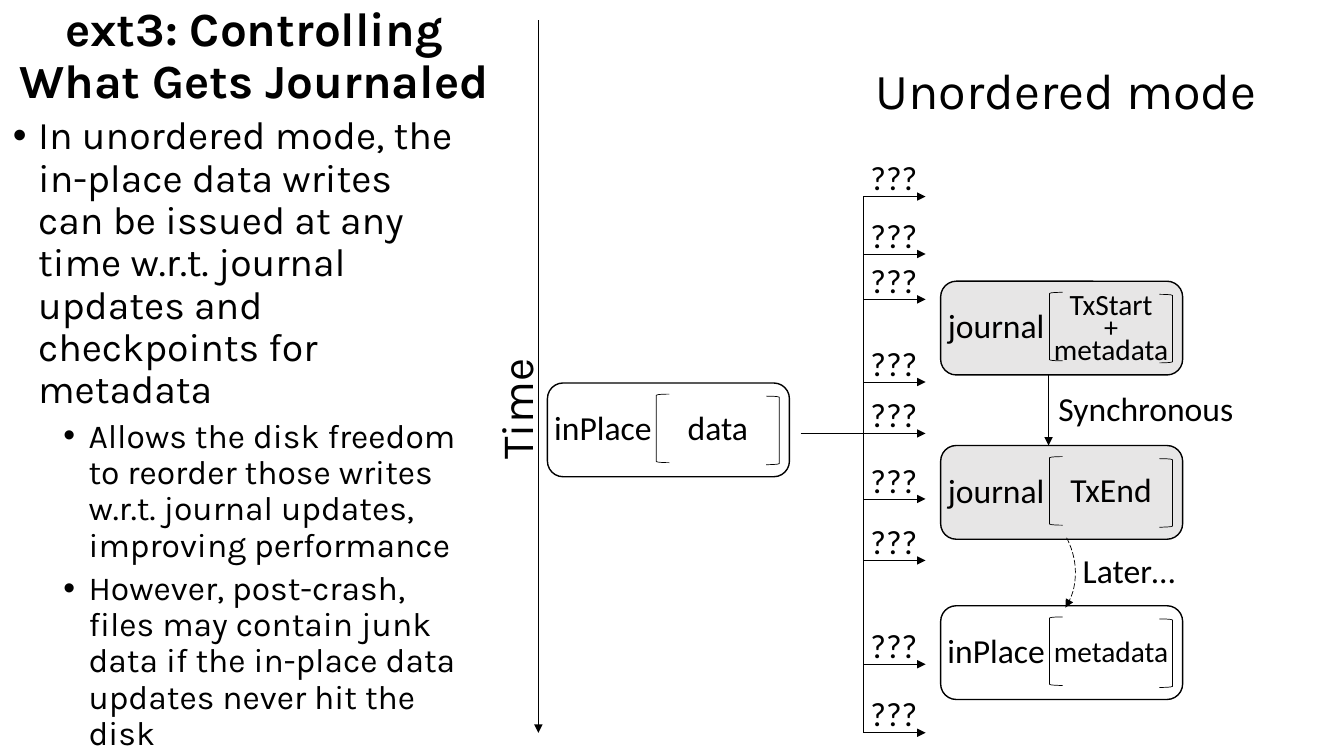
from lxml import etree
from pptx import Presentation
from pptx.dml.color import RGBColor
from pptx.enum.dml import MSO_LINE
from pptx.enum.shapes import MSO_CONNECTOR, MSO_SHAPE
from pptx.enum.text import MSO_ANCHOR, PP_ALIGN
from pptx.oxml.ns import qn
from pptx.util import Inches, Pt

LEFT, CENTER = PP_ALIGN.LEFT, PP_ALIGN.CENTER
TOP, MIDDLE = MSO_ANCHOR.TOP, MSO_ANCHOR.MIDDLE
STRAIGHT = MSO_CONNECTOR.STRAIGHT
ROUND_RECT, BRACKET, ARC = MSO_SHAPE.ROUNDED_RECTANGLE, MSO_SHAPE.LEFT_BRACKET, MSO_SHAPE.ARC
LONG_DASH = MSO_LINE.LONG_DASH
BLACK, WHITE, GRAY = "000000", "FFFFFF", "E7E6E6"

# Content
TITLE = "ext3: Controlling What Gets Journaled"
MODE = "Unordered mode"
BULLETS = [  # text, level, size, space before
    ("In unordered mode, the in-place data writes can be issued at any time "
     "w.r.t. journal updates and checkpoints for metadata", 0, 28, 10),
    ("Allows the disk freedom to reorder those writes w.r.t. journal updates, "
     "improving performance", 1, 24, 5),
    ("However, post-crash, files may contain junk data if the in-place data "
     "updates never hit the disk", 1, 24, 5),
]
WRITES = [  # left, top, fill, target, contents, size, contents offset
    (5.43, 3.8, WHITE, "inPlace", ["data"], 24, 0.19),
    (9.33, 2.79, GRAY, "journal", ["TxStart", "metadata"], 21, 0),
    (9.33, 4.42, GRAY, "journal", ["TxEnd"], 24, 0.18),
    (9.33, 6.01, WHITE, "inPlace", ["metadata"], 21, 0.22),
]
NOTES = [("Synchronous", 10.4, 3.8, 1.97), ("Later…", 10.64, 5.41, 1.19)]
GUESS = "???"
GUESS_YS = [1.95, 2.52, 2.97, 3.79, 4.3, 4.95, 5.56, 6.59, 7.27]
SPINE_X = 8.56
BOX_W, BOX_H = 2.4, 0.93

prs = Presentation()
prs.slide_width, prs.slide_height = Inches(13.33), Inches(7.5)
s = prs.slides.add_slide(prs.slide_layouts[6])


def rgb(color):
    return RGBColor.from_string(color)


def inches(*values):
    return [Inches(v) for v in values]


def add_text(text, x, y, w, h, size=24, font="Calibri", bold=False, align=CENTER,
             anchor=TOP, spacing=None, gap=0, rotation=0):
    sp = s.shapes.add_textbox(*inches(x, y, w, h))
    sp.rotation = rotation
    tf = sp.text_frame
    tf.word_wrap = True
    tf.vertical_anchor = anchor
    for i, line in enumerate([text] if isinstance(text, str) else text):
        p = tf.paragraphs[0] if i == 0 else tf.add_paragraph()
        p.alignment = align
        p.line_spacing = spacing
        if i:
            p.space_before = Pt(gap)
        r = p.add_run()
        r.text = line
        r.font.size, r.font.name, r.font.bold = Pt(size), font, bold
        r.font.color.rgb = rgb(BLACK)
    return sp


def add_head(sp):
    etree.SubElement(sp.line._get_or_add_ln(), qn("a:tailEnd"), type="triangle")


def add_line(x1, y1, x2, y2, arrow=True):
    c = s.shapes.add_connector(STRAIGHT, *inches(x1, y1, x2, y2))
    c.line.color.rgb = rgb(BLACK)
    c.line.width = Pt(0.5)
    if arrow:
        add_head(c)
    etree.SubElement(c._element.spPr, qn("a:effectLst"))


def add_outline(kind, x, y, w, h, fill=None, width=0.5):
    sp = s.shapes.add_shape(kind, *inches(x, y, w, h))
    sp.shadow.inherit = False
    if fill:
        sp.fill.solid()
        sp.fill.fore_color.rgb = rgb(fill)
    else:
        sp.fill.background()
    sp.line.color.rgb = rgb(BLACK)
    sp.line.width = Pt(width)
    return sp


# Title and time axis
add_text(TITLE, 0.01, 0.01, 5.02, 1.11, size=34, font="Karla", bold=True,
         anchor=MIDDLE, spacing=0.9)
add_line(5.34, 0.2, 5.34, 7.27)
add_text("Time", 4.44, 3.74, 1.35, 0.64, size=32, font="Karla", rotation=270)

# Bullets
body = add_text([b[0] for b in BULLETS], 0.03, 1.1, 4.63, 6.41, font="Karla",
                align=LEFT, spacing=0.9)
for p, (_, level, size, before) in zip(body.text_frame.paragraphs, BULLETS):
    p.level = level
    p.space_before = Pt(before)
    p.runs[0].font.size = Pt(size)
    pPr = p._p.get_or_add_pPr()
    pPr.set("marL", str(Inches(0.25 + 0.5 * level)))
    pPr.set("indent", str(Inches(-0.25)))
    etree.SubElement(pPr, qn("a:buFont"), typeface="Arial")
    etree.SubElement(pPr, qn("a:buChar"), char="•")

# Disk writes
add_text(MODE, 8.48, 0.54, 4.19, 0.71, size=36, font="Karla")
for x, y, fill, target, contents, size, dy in WRITES:
    add_outline(ROUND_RECT, x, y, BOX_W, BOX_H, fill, 1)
    add_text(contents, x + 0.99, y + dy, 1.4, 0.5, size=size, gap=7)
    add_outline(BRACKET, x + 1.08, y + 0.11, 0.13, 0.68)
    closing = add_outline(BRACKET, x + 2.17, y + 0.13, 0.13, 0.68)
    closing._element.spPr.xfrm.set("flipH", "1")
    add_text(target, x - 0.04, y + 0.19, 1.18, 0.5)
add_text("+", 10.32, 3.02, 1.4, 0.44, size=20)

# Order between the journal writes
add_line(10.4, 3.72, 10.4, 4.42)
later = add_outline(ARC, 9.17, 4.92, 1.53, 1.36)
later.adjustments[0], later.adjustments[1] = 178.78, 212.65
later.rotation = 39.7
later.line.dash_style = LONG_DASH
add_head(later)
for text, x, y, w in NOTES:
    add_text(text, x, y, w, 0.5, align=LEFT)

# Possible moments of the data write
add_line(7.94, 4.3, SPINE_X, 4.3, arrow=False)
add_line(SPINE_X, GUESS_YS[-1], SPINE_X, GUESS_YS[0], arrow=False)
for y in GUESS_YS:
    add_line(SPINE_X, y, SPINE_X + 0.62, y)
    add_text(GUESS, SPINE_X - 0.14, y - 0.44, 0.89, 0.5)

prs.save("out.pptx")
